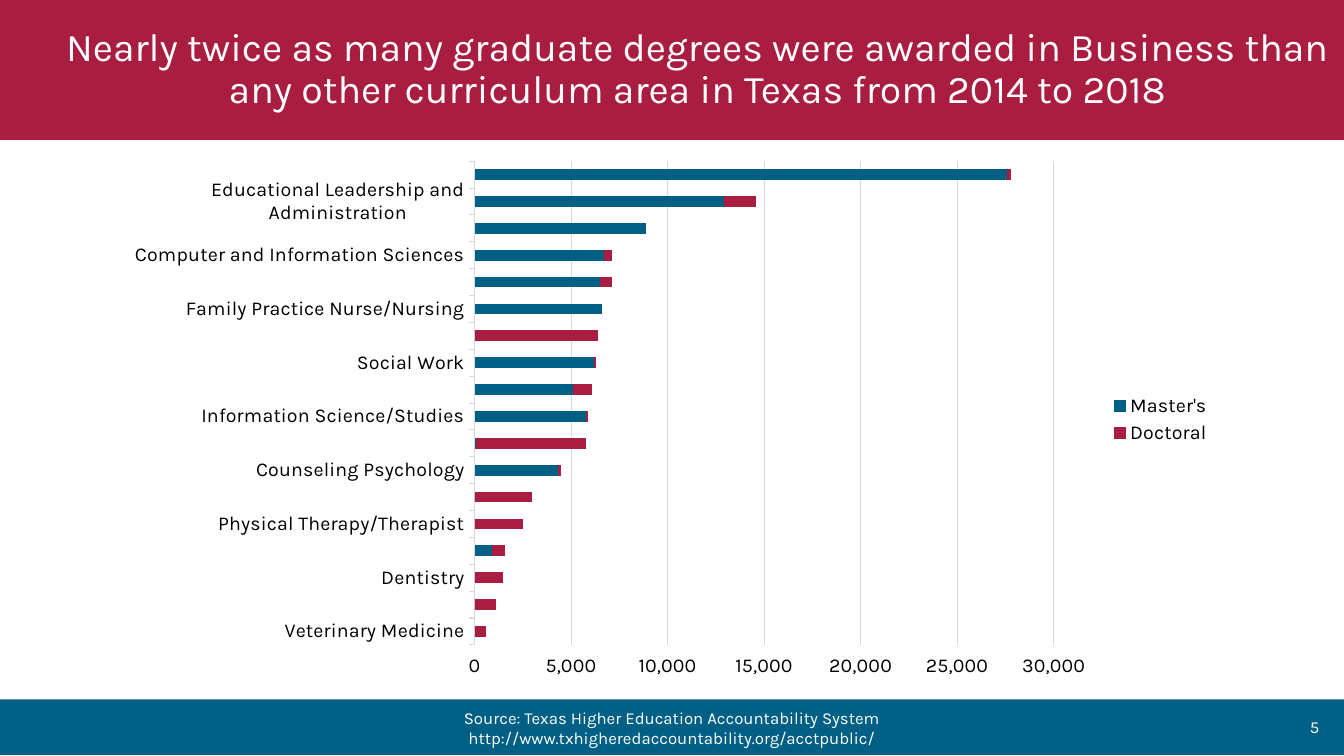
"""Build the slide on graduate degrees awarded in Texas by curriculum area."""
from typing import NamedTuple

from pptx import Presentation
from pptx.chart.data import CategoryChartData as ChartData
from pptx.dml.color import RGBColor as Color
from pptx.enum.chart import XL_CHART_TYPE as ChartType
from pptx.enum.chart import XL_LEGEND_POSITION as LegendSide
from pptx.enum.chart import XL_TICK_MARK as TickMark
from pptx.enum.shapes import MSO_SHAPE as ShapeKind
from pptx.enum.text import MSO_ANCHOR as Anchor
from pptx.enum.text import MSO_AUTO_SIZE as AutoSize
from pptx.enum.text import PP_ALIGN as Align
from pptx.util import Pt

FONT = "Karla"
COLORS = {"teal": "005F84", "crimson": "A81D40", "white": "FFFFFF",
          "black": "000000", "grid": "D9D9D9"}
TITLE = ("Nearly twice as many graduate degrees were awarded in Business than "
         "any other curriculum area in Texas from 2014 to 2018")


class Frame(NamedTuple):
    left: float
    top: float
    width: float
    height: float


class Note(NamedTuple):
    text: str
    frame: Frame
    align: Align


class Area(NamedTuple):
    name: str
    masters: int
    doctoral: int


PAGE_WIDTH, PAGE_HEIGHT = 960, 540
TITLE_BAND = Frame(0, 0, PAGE_WIDTH, 100)
FOOTER_BAND = Frame(0, 499.5, PAGE_WIDTH, 39.75)
CHART_FRAME = Frame(80.5, 107.5, 792, 384.5)
NOTES = [
    Note("Source: Texas Higher Education Accountability System "
         "http://www.txhigheredaccountability.org/acctpublic/",
         Frame(283.5, 505.5, 393, 28.75), Align.CENTER),
    Note("5", Frame(733.5, 504.75, 216, 28.75), Align.RIGHT),
]
AREAS = [
    Area("Veterinary Medicine", 0, 600),
    Area("Osteopathic Medicine/Osteopathy", 0, 1100),
    Area("Dentistry", 0, 1500),
    Area("Chemistry", 900, 700),
    Area("Physical Therapy/Therapist", 0, 2500),
    Area("Pharmacy", 0, 3000),
    Area("Counseling Psychology", 4300, 200),
    Area("Law", 100, 5700),
    Area("Information Science/Studies", 5800, 100),
    Area("Electrical and Electronics Engineering", 5100, 1000),
    Area("Social Work", 6200, 100),
    Area("Medicine", 0, 6400),
    Area("Family Practice Nurse/Nursing", 6600, 0),
    Area("Curriculum and Instruction", 6500, 600),
    Area("Computer and Information Sciences", 6700, 400),
    Area("Accounting", 8900, 0),
    Area("Educational Leadership and Administration", 12900, 1700),
    Area("Business Administration and Management", 27600, 200),
]


def color(name: str) -> Color:
    """Return the named colour."""
    return Color.from_string(COLORS[name])


def points(frame: Frame) -> list[Pt]:
    """Convert a frame to lengths."""
    return [Pt(value) for value in frame]


def style_font(font, size: float, name: str) -> None:
    """Set the typeface, size and colour of a font."""
    font.name, font.size, font.bold = FONT, Pt(size), False
    font.color.rgb = color(name)


def write(shape, text: str, size: float, align: Align):
    """Write one centred-anchor paragraph and return it."""
    frame = shape.text_frame
    frame.word_wrap = True
    frame.auto_size = AutoSize.NONE
    frame.vertical_anchor = Anchor.MIDDLE
    para = frame.paragraphs[0]
    para.alignment = align
    span = para.add_run()
    span.text = text
    style_font(span.font, size, "white")
    return para


def add_title(page) -> None:
    """Turn the title placeholder into the top band."""
    title = page.shapes.title
    title.left, title.top, title.width, title.height = points(TITLE_BAND)
    title.fill.solid()
    title.fill.fore_color.rgb = color("crimson")
    para = write(title, TITLE, 28, Align.CENTER)
    para.line_spacing = 0.9
    properties = para._p.get_or_add_pPr()
    properties.set("marL", str(Pt(36)))
    properties.set("indent", "0")


def add_footer(page) -> None:
    """Draw the bottom band with its notes."""
    band = page.shapes.add_shape(ShapeKind.RECTANGLE, *points(FOOTER_BAND))
    band.shadow.inherit = False
    band.fill.solid()
    band.fill.fore_color.rgb = color("teal")
    band.line.fill.background()
    for note in NOTES:
        box = page.shapes.add_textbox(*points(note.frame))
        write(box, note.text, 12, note.align)


def style_line(line) -> None:
    """Give a chart line the grid look."""
    line.color.rgb = color("grid")
    line.width = Pt(0.75)


def add_degree_chart(page) -> None:
    """Add the stacked bars of degrees by curriculum area."""
    data = ChartData(number_format="#,##0")
    data.categories = [area.name for area in AREAS]
    data.add_series("Master's", [area.masters for area in AREAS])
    data.add_series("Doctoral", [area.doctoral for area in AREAS])
    chart = page.shapes.add_chart(
        ChartType.BAR_STACKED, *points(CHART_FRAME), data).chart
    chart.has_title = False
    style_font(chart.font, 14, "black")

    plot = chart.plots[0]
    plot.vary_by_categories = False
    plot.gap_width, plot.overlap = 150, 100
    for series, name in zip(plot.series, ("teal", "crimson")):
        series.format.fill.solid()
        series.format.fill.fore_color.rgb = color(name)

    for axis in (chart.category_axis, chart.value_axis):
        axis.major_tick_mark = TickMark.OUTSIDE
        axis.minor_tick_mark = TickMark.NONE
        style_font(axis.tick_labels.font, 14, "black")
    style_line(chart.category_axis.format.line)
    degrees = chart.value_axis
    degrees.minimum_scale, degrees.maximum_scale = 0, 30000
    degrees.major_unit = 5000
    degrees.tick_labels.number_format = "#,##0"
    degrees.tick_labels.number_format_is_linked = False
    degrees.format.line.fill.background()
    degrees.has_major_gridlines = True
    style_line(degrees.major_gridlines.format.line)

    chart.has_legend = True
    chart.legend.position = LegendSide.RIGHT
    chart.legend.include_in_layout = False
    style_font(chart.legend.font, 14, "black")


def main() -> None:
    """Build and save the deck."""
    deck = Presentation()
    deck.slide_width, deck.slide_height = Pt(PAGE_WIDTH), Pt(PAGE_HEIGHT)
    page = deck.slides.add_slide(deck.slide_layouts[5])
    add_title(page)
    add_footer(page)
    add_degree_chart(page)
    deck.save("out.pptx")


if __name__ == "__main__":
    main()
